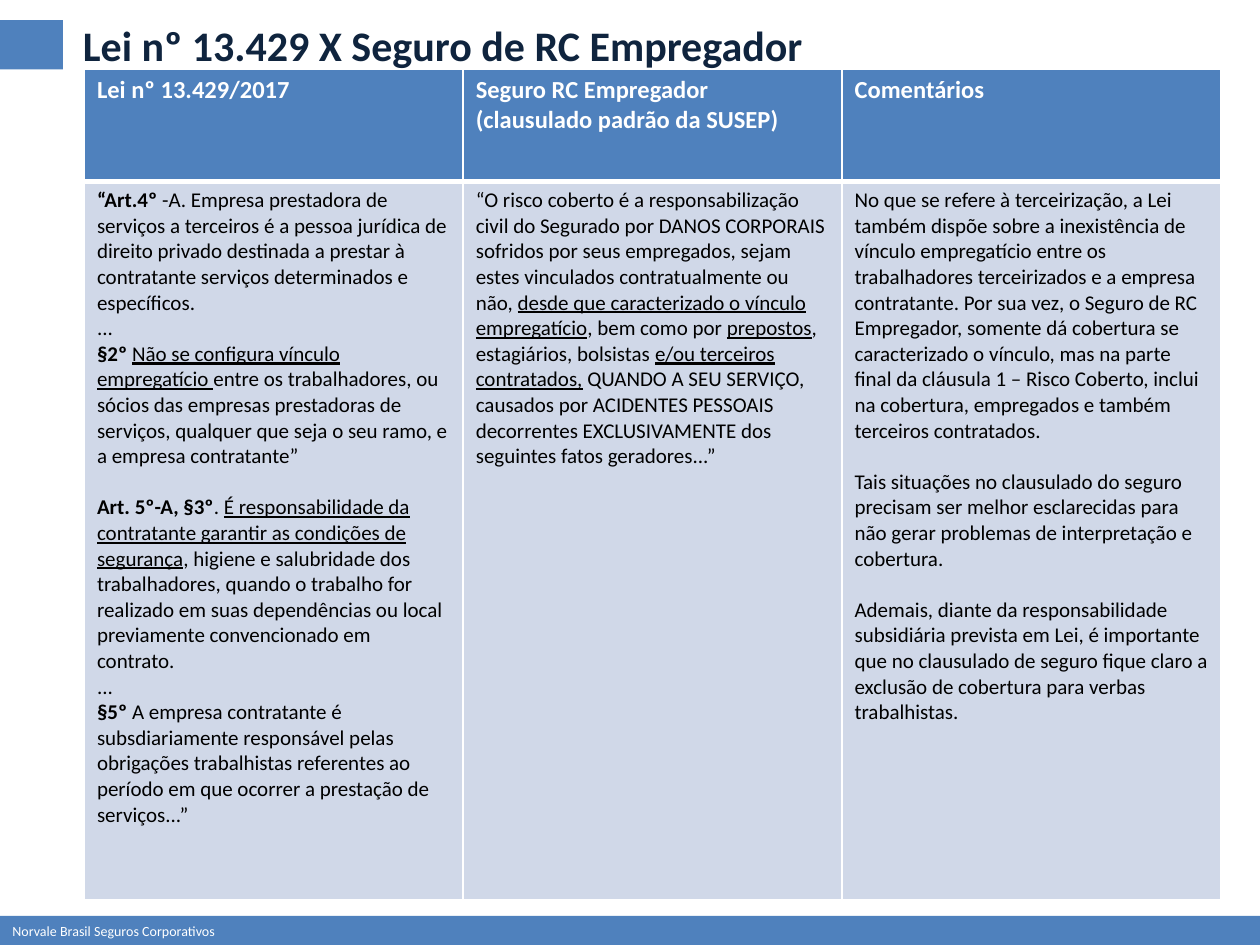
from lxml.etree import SubElement
from pptx import Presentation
from pptx.dml.color import RGBColor
from pptx.enum.shapes import MSO_SHAPE as Shape
from pptx.enum.text import MSO_ANCHOR as Anchor, MSO_AUTO_SIZE as Fit
from pptx.oxml.ns import qn
from pptx.util import Inches, Pt

BLUE = RGBColor(0x4F, 0x81, 0xBD)
PALE = RGBColor(0xD0, 0xD8, 0xE8)
NAVY = RGBColor(0x0F, 0x24, 0x3E)
WHITE = RGBColor(0xFF, 0xFF, 0xFF)
BLACK = RGBColor(0x00, 0x00, 0x00)
FONT = "Calibri"
GAP = Pt(14.65)

HEADS = [
    "Lei nº 13.429/2017",
    "Seguro RC Empregador (clausulado padrão da SUSEP)",
    "Comentários",
]

LAW = [
    (0, [("“Art.4º ", "b"),
         ("-A. Empresa prestadora de serviços a terceiros é a pessoa jurídica de "
          "direito privado destinada a prestar à contratante serviços determinados "
          "e específicos.", "")]),
    (0, [("...", "")]),
    (0, [("§2º ", "b"),
         ("Não se configura vínculo empregatício ", "u"),
         ("entre os trabalhadores, ou sócios das empresas prestadoras de serviços, "
          "qualquer que seja o seu ramo, e a empresa contratante”", "")]),
    (GAP, [("Art. 5º-A, §3º", "b"),
           (". ", ""),
           ("É responsabilidade da contratante garantir as condições de segurança", "u"),
           (", higiene e salubridade dos trabalhadores, quando o trabalho for realizado "
            "em suas dependências ou local previamente convencionado em contrato.", "")]),
    (0, [("...", "")]),
    (0, [("§5º ", "b"),
         ("A empresa contratante é subsdiariamente responsável pelas obrigações "
          "trabalhistas referentes ao período em que ocorrer a prestação de "
          "serviços...”", "")]),
]

COVER = [
    (0, [("“O risco coberto é a responsabilização civil do Segurado por DANOS CORPORAIS "
          "sofridos por seus empregados, sejam estes vinculados contratualmente ou não, ", ""),
         ("desde que caracterizado o vínculo empregatício", "u"),
         (", bem como por ", ""),
         ("prepostos", "u"),
         (", estagiários, bolsistas ", ""),
         ("e/ou terceiros contratados,", "u"),
         (" QUANDO A SEU SERVIÇO, causados por ACIDENTES PESSOAIS decorrentes "
          "EXCLUSIVAMENTE dos seguintes fatos geradores...”", "")]),
]

NOTES = [
    (0, [("No que se refere à terceirização, a Lei também dispõe sobre a inexistência de "
          "vínculo empregatício entre os trabalhadores terceirizados e a empresa "
          "contratante. Por sua vez, o Seguro de RC Empregador, somente dá cobertura se "
          "caracterizado o vínculo, mas na parte final da cláusula 1 – Risco Coberto, "
          "inclui na cobertura, empregados e também terceiros contratados.", "")]),
    (GAP, [("Tais situações no clausulado do seguro precisam ser melhor esclarecidas para "
            "não gerar problemas de interpretação e cobertura.", "")]),
    (GAP, [("Ademais, diante da responsabilidade subsidiária prevista em Lei, é importante "
            "que no clausulado de seguro fique claro a exclusão de cobertura para verbas "
            "trabalhistas.", "")]),
]


def write(frame, paras, size, color):
    frame.word_wrap = True
    for i, (gap, runs) in enumerate(paras):
        para = frame.add_paragraph() if i else frame.paragraphs[0]
        para.space_before = gap
        for text, style in runs:
            run = para.add_run()
            run.text = text
            font = run.font
            font.name, font.size = FONT, Pt(size)
            font.color.rgb = color
            font.bold = "b" in style
            font.underline = "u" in style


def add_bar(slide, box):
    bar = slide.shapes.add_shape(Shape.RECTANGLE, *box)
    bar.shadow.inherit = False
    bar.fill.solid()
    bar.fill.fore_color.rgb = BLUE
    bar.line.fill.background()


def add_text(slide, box, text, style, size, color):
    frame = slide.shapes.add_textbox(*box).text_frame
    write(frame, [(0, [(text, style)])], size, color)
    return frame


def add_title(slide, box):
    left, top, width, height = box
    add_bar(slide, (left, top, Inches(0.5), height))
    inset = Inches(0.56)
    frame = add_text(slide, (left + inset, top, width - inset, height),
                     "Lei nº 13.429 X Seguro de RC Empregador", "b", 24, NAVY)
    frame.vertical_anchor = Anchor.MIDDLE


def add_footer(slide, box):
    add_bar(slide, box)
    frame = add_text(slide, box, "Norvale Brasil Seguros Corporativos", "", 8, WHITE)
    frame.auto_size = Fit.SHAPE_TO_FIT_TEXT


def set_edges(cell, widths):
    props = cell._tc.get_or_add_tcPr()
    for i, (side, width) in enumerate(zip("LRTB", widths)):
        line = SubElement(props, qn(f"a:ln{side}"), w=str(Pt(width)))
        fill = SubElement(line, qn("a:solidFill"))
        SubElement(fill, qn("a:srgbClr"), val=str(WHITE))
        props.insert(i, line)


def fill_cell(cell, paras, size, color, back, edges):
    cell.fill.solid()
    cell.fill.fore_color.rgb = back
    set_edges(cell, edges)
    write(cell.text_frame, paras, size, color)


def add_grid(slide, box):
    left, top, width, height = box
    table = slide.shapes.add_table(2, 3, *box).table
    head = Inches(0.89)
    table.rows[0].height, table.rows[1].height = head, height - head
    for i, (name, body) in enumerate(zip(HEADS, (LAW, COVER, NOTES))):
        table.columns[i].width = width // 3
        fill_cell(table.cell(0, i), [(0, [(name, "b")])], 14, WHITE, BLUE, (1, 1, 1, 3))
        fill_cell(table.cell(1, i), body, 12, BLACK, PALE, (1, 1, 3, 1))


def main():
    deck = Presentation()
    deck.slide_width, deck.slide_height = Inches(10), Inches(7.5)
    slide = deck.slides.add_slide(deck.slide_layouts[6])
    add_footer(slide, (0, Inches(7.27), Inches(10), Inches(0.23)))
    add_title(slide, (0, Inches(0.16), Inches(9.69), Inches(0.39)))
    add_grid(slide, (Inches(0.67), Inches(0.55), Inches(9.02), Inches(6.59)))
    deck.save("out.pptx")


if __name__ == "__main__":
    main()
